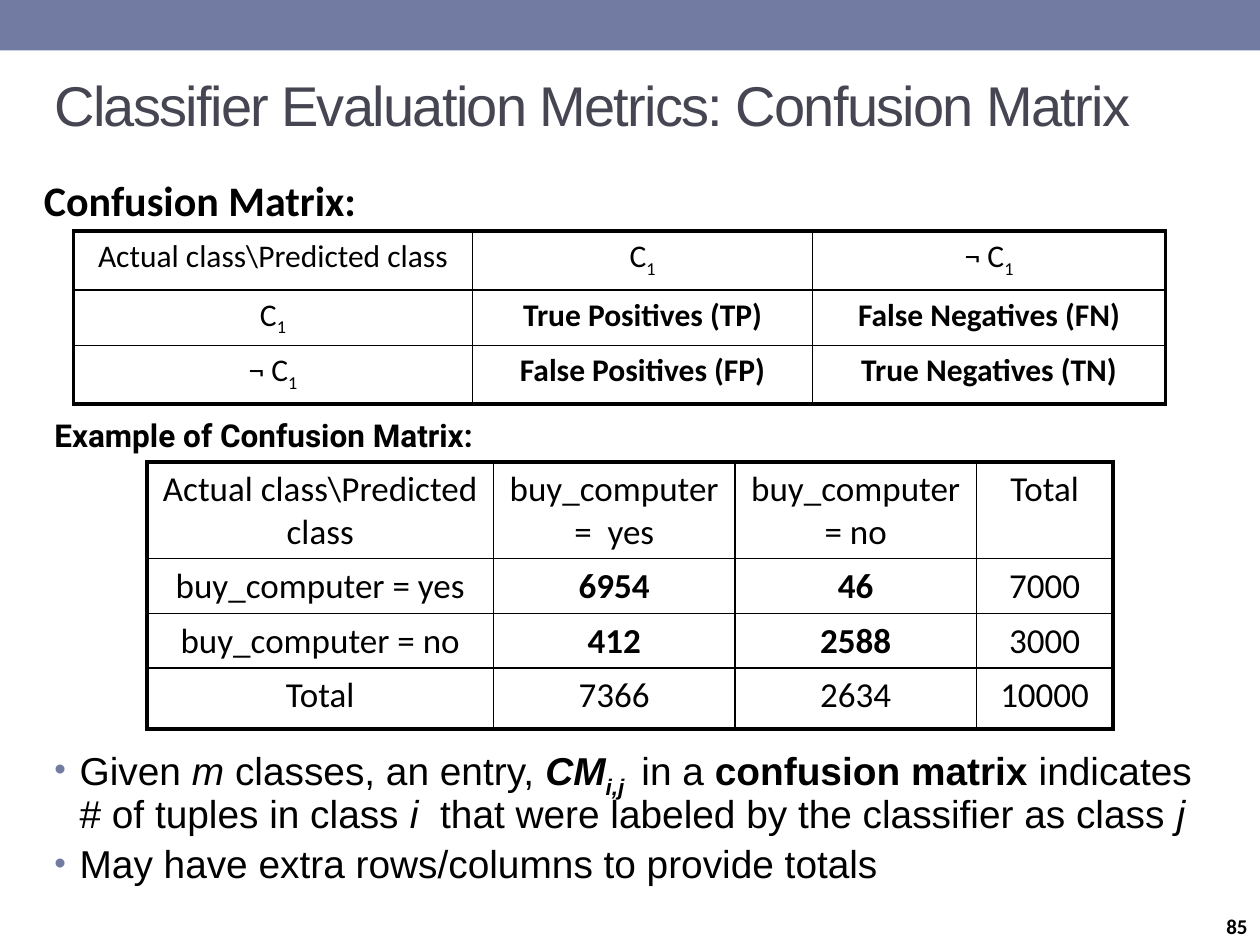
from lxml.etree import SubElement
from pptx import Presentation
from pptx.dml.color import RGBColor
from pptx.enum.shapes import MSO_SHAPE
from pptx.enum.text import MSO_ANCHOR, PP_ALIGN
from pptx.oxml.ns import qn
from pptx.util import Pt

PX = 7620
BLACK, SLATE, INK = "000000", "727CA3", "464653"
OUTER, INNER = 2.25, 1


def px(*lengths):
    return [length * PX for length in lengths]


def color(hex_code):
    return RGBColor.from_string(hex_code)


def write(paragraph, runs, size, font, ink=BLACK):
    for words, style in runs:
        run = paragraph.add_run()
        run.text = words
        run.font.size = Pt(size)
        run.font.name = font
        run.font.color.rgb = color(ink)
        run.font.bold = "b" in style
        run.font.italic = "i" in style
        if "s" in style:
            run.font._element.set("baseline", "-25000")


def add_text(slide, box, anchor=MSO_ANCHOR.TOP, wrap=True):
    frame = slide.shapes.add_textbox(*px(*box)).text_frame
    frame.word_wrap = wrap
    frame.vertical_anchor = anchor
    return frame


def add_label(slide, box, words, size, font, wrap=True):
    frame = add_text(slide, box, wrap=wrap)
    write(frame.paragraphs[0], [(words, "b")], size, font)


def add_banner(slide, box):
    banner = slide.shapes.add_shape(MSO_SHAPE.RECTANGLE, *px(*box))
    banner.shadow.inherit = False
    banner.fill.solid()
    banner.fill.fore_color.rgb = color(SLATE)
    banner.line.fill.background()


def add_title(slide, box, words):
    title = add_text(slide, box, MSO_ANCHOR.MIDDLE).paragraphs[0]
    write(title, [(words, "")], 32, "Arial", INK)
    title.runs[0].font._element.set("spc", "-100")


def add_borders(cell, widths):
    properties = cell._tc.get_or_add_tcPr()
    for side, width in zip("LRTB", widths):
        line = SubElement(properties, qn(f"a:ln{side}"), w=str(Pt(width)))
        fill = SubElement(line, qn("a:solidFill"))
        SubElement(fill, qn("a:srgbClr"), val=BLACK)


def add_matrix(slide, left, top, widths, heights, rows, size):
    box = px(left, top, sum(widths), sum(heights))
    matrix = slide.shapes.add_table(len(heights), len(widths), *box).table
    matrix.first_row = matrix.horz_banding = False
    for column, width in zip(matrix.columns, px(*widths)):
        column.width = width
    last_row, last_col = len(heights) - 1, len(widths) - 1
    for r, (height, entries) in enumerate(zip(px(*heights), rows)):
        matrix.rows[r].height = height
        for c, runs in enumerate(entries):
            cell = matrix.cell(r, c)
            edges = (c == 0, c == last_col, r == 0, r == last_row)
            add_borders(cell, [OUTER if edge else INNER for edge in edges])
            cell.fill.background()
            paragraph = cell.text_frame.paragraphs[0]
            paragraph.alignment = PP_ALIGN.CENTER
            paragraph.space_before = Pt(size * 0.2)
            write(paragraph, runs, size, "Calibri")


def add_bullets(slide, box, items):
    frame = add_text(slide, box)
    for n, runs in enumerate(items):
        paragraph = frame.add_paragraph() if n else frame.paragraphs[0]
        paragraph.line_spacing = 0.9
        paragraph.space_before = Pt(4.4)
        write(paragraph, runs, 22.2, "Arial")
        properties = paragraph._p.get_or_add_pPr()
        properties.set("marL", str(24 * PX))
        properties.set("indent", str(-24 * PX))
        tint = SubElement(properties, qn("a:buClr"))
        SubElement(tint, qn("a:srgbClr"), val=SLATE)
        SubElement(properties, qn("a:buSzPct"), val="85000")
        SubElement(properties, qn("a:buFont"), typeface="Arial")
        SubElement(properties, qn("a:buChar"), char="•")


def add_page_number(slide, box, number):
    paragraph = add_text(slide, box, MSO_ANCHOR.BOTTOM).paragraphs[0]
    paragraph.alignment = PP_ALIGN.RIGHT
    write(paragraph, [(number, "b")], 12, "Calibri")


def plain(*entries):
    return [[(words, "")] for words in entries]


def bold(*entries):
    return [[(words, "b")] for words in entries]


def main():
    deck = Presentation()
    deck.slide_width, deck.slide_height = px(1200, 900)
    slide = deck.slides.add_slide(deck.slide_layouts[6])

    add_banner(slide, (0, 0, 1200, 48))
    add_title(slide, (40, 24, 1200, 150),
              "Classifier Evaluation Metrics: Confusion Matrix")

    corner = plain("Actual class\\Predicted class")
    positive = [("C", ""), ("1", "s")]
    negative = [("¬ C", ""), ("1", "s")]
    definition = [
        corner + [positive, negative],
        [positive] + bold("True Positives (TP)", "False Negatives (FN)"),
        [negative] + bold("False Positives (FP)", "True Negatives (TN)"),
    ]
    add_label(slide, (30, 160, 342, 60), "Confusion Matrix:", 24, "Calibri")
    add_matrix(slide, 70, 220, (380, 324, 336), (56, 50, 56), definition, 18)

    example = [
        corner + plain("buy_computer =  yes", "buy_computer = no", "Total"),
        plain("buy_computer = yes") + bold("6954", "46") + plain("7000"),
        plain("buy_computer = no") + bold("412", "2588") + plain("3000"),
        plain("Total", "7366", "2634", "10000"),
    ]
    add_label(slide, (40, 390, 468, 48), "Example of Confusion Matrix:",
              18, "Roboto", wrap=False)
    add_matrix(slide, 140, 440, (330, 230, 230, 130), (92, 52, 52, 58),
               example, 20)

    add_bullets(slide, (40, 706, 1110, 166), [
        [("Given", ""), (" m", "i"), (" classes, an entry, ", ""),
         ("CM", "bi"), ("i,j ", "bis"), (" in a ", ""),
         ("confusion matrix", "b"), (" indicates # of tuples in class ", ""),
         ("i", "i"),
         ("  that were labeled by the classifier as class ", ""), ("j", "i")],
        [("May have extra rows/columns to provide totals", "")],
    ])
    add_page_number(slide, (950, 850, 250, 50), "85")
    deck.save("out.pptx")


if __name__ == "__main__":
    main()
